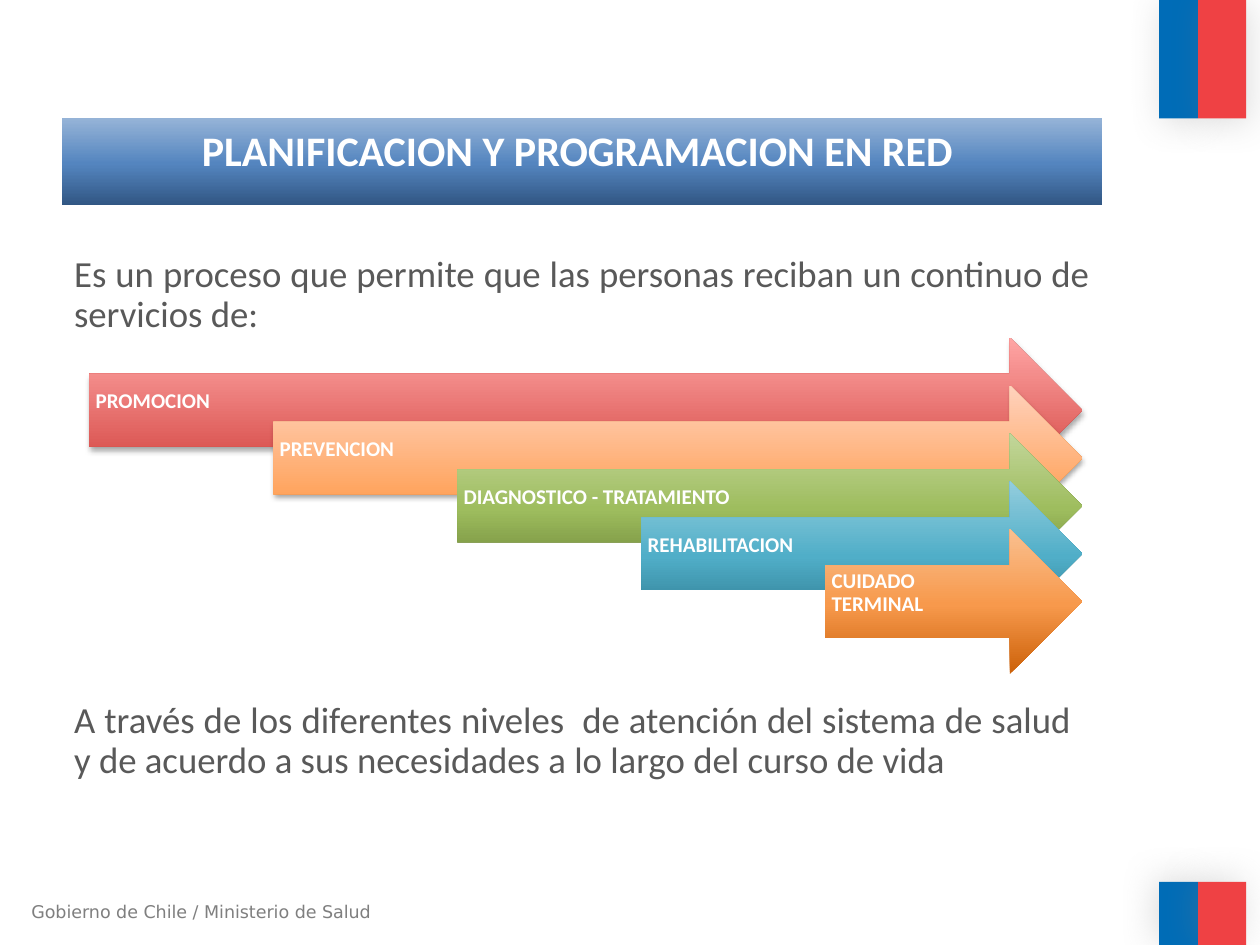
from lxml.etree import SubElement
from pptx import Presentation
from pptx.dml.color import RGBColor
from pptx.enum.shapes import MSO_SHAPE
from pptx.enum.text import MSO_ANCHOR, PP_ALIGN
from pptx.oxml.ns import qn
from pptx.util import Inches, Pt

TITLE = "PLANIFICACION Y PROGRAMACION EN RED "
TITLE_STOPS = [(0, "315683"), (48, "5485BF"), (100, "95B3D7")]
BODY = [
    ("Es un proceso que permite que las personas reciban un continuo de servicios de:", 1.98, 8.26),
    ("A través de los diferentes niveles  de atención del sistema de salud "
     "y de acuerdo a sus necesidades a lo largo del curso de vida", 5.52, 8.11),
]
FOOTER = "Gobierno de Chile / Ministerio de Salud"
SERVICES = [
    ("PROMOCION", [(0, "D1403C"), (100, "FFA6A5")], True),
    ("PREVENCION", [(0, "FF953E"), (100, "FFD2BD")], True),
    ("DIAGNOSTICO - TRATAMIENTO", [(0, "6A8336"), (48, "9EBD5E"), (100, "C3D69B")], False),
    ("REHABILITACION", [(0, "2C778B"), (48, "50AEC8"), (100, "93CDDD")], False),
    ("CUIDADO TERMINAL", [(0, "CC6109"), (48, "F7994C"), (100, "FAC090")], False),
]
STRIPES = [("006CB7", 9.2, 0.31), ("EF4144", 9.51, 0.38)]
BANDS = [(0, 0.94, 45), (7, 0.5, 215)]

MARGIN = 0.49
ARROW_LEFT, ARROW_TOP, ARROW_RIGHT, ARROW_HEIGHT = 0.71, 2.68, 8.59, 1.15
STEP_RIGHT, STEP_DOWN = 1.46, 0.38


def color(value):
    """Turn a hex string into a colour."""
    return RGBColor.from_string(value)


def fill_gradient(shape, stops):
    """Fill a shape with a gradient that runs from bottom to top."""
    shape.fill.gradient()
    shape.fill.gradient_angle = 90
    stop_list = shape.fill._fill._gradFill.find(qn("a:gsLst"))
    for old in list(stop_list):
        stop_list.remove(old)
    for position, value in stops:
        stop = SubElement(stop_list, qn("a:gs"), pos=str(position * 1000))
        SubElement(stop, qn("a:srgbClr"), val=value)


def add_shadow(shape, value, opacity, blur, distance, angle):
    """Give a shape an outer shadow."""
    effects = shape._element.spPr.find(qn("a:effectLst"))
    shadow = SubElement(effects, qn("a:outerShdw"), blurRad=str(Pt(blur)), dist=str(Pt(distance)),
                        dir=str(angle * 60000), algn="ctr", rotWithShape="0")
    tint = SubElement(shadow, qn("a:srgbClr"), val=value)
    SubElement(tint, qn("a:alpha"), val=str(opacity * 1000))


def write(shape, text, size, value, font="Calibri", bold=False, align=PP_ALIGN.LEFT, spacing=None):
    """Set and format the single paragraph of a shape."""
    frame = shape.text_frame
    frame.word_wrap = True
    frame.text = text
    para = frame.paragraphs[0]
    para.alignment = align
    para.line_spacing = spacing
    span = para.runs[0]
    span.font.size, span.font.name, span.font.bold = Pt(size), font, bold
    span.font.color.rgb = color(value)


def add_plain(page, preset, left, top, width, height):
    """Add a preset shape without line or shadow."""
    shape = page.shapes.add_shape(preset, *map(Inches, (left, top, width, height)))
    shape.line.fill.background()
    shape.shadow.inherit = False
    return shape


def add_text(page, left, top, width, height, text, **style):
    """Add a text box with one paragraph."""
    box = page.shapes.add_textbox(*map(Inches, (left, top, width, height)))
    write(box, text, **style)


def add_service(page, index, text, stops, shaded):
    """Add one arrow of the staircase."""
    left = ARROW_LEFT + index * STEP_RIGHT
    arrow = add_plain(page, MSO_SHAPE.RIGHT_ARROW, left, ARROW_TOP + index * STEP_DOWN,
                      ARROW_RIGHT - left, ARROW_HEIGHT)
    fill_gradient(arrow, stops)
    if shaded:
        add_shadow(arrow, "000000", 35, 3.1, 1.8, 90)
    frame = arrow.text_frame
    frame.vertical_anchor = MSO_ANCHOR.MIDDLE
    frame.margin_left = frame.margin_top = Inches(0.05)
    frame.margin_right, frame.margin_bottom = Inches(0.28), Inches(0.18)
    write(arrow, text, 12, "FFFFFF", bold=True, spacing=0.9)


def main():
    """Build the slide and save it."""
    deck = Presentation()
    deck.slide_width, deck.slide_height = Inches(10), Inches(7.5)
    page = deck.slides.add_slide(deck.slide_layouts[5])

    title = page.shapes.title
    title.left, title.top, title.width, title.height = map(Inches, (MARGIN, 0.94, 8.26, 0.69))
    fill_gradient(title, TITLE_STOPS)
    title.text_frame.vertical_anchor = MSO_ANCHOR.TOP
    write(title, TITLE, 24, "FFFFFF", bold=True, align=PP_ALIGN.CENTER)

    for top, height, angle in BANDS:
        for value, left, width in STRIPES:
            stripe = add_plain(page, MSO_SHAPE.RECTANGLE, left, top, width, height)
            stripe.fill.solid()
            stripe.fill.fore_color.rgb = color(value)
            add_shadow(stripe, "808080", 25, 20, 3, angle)

    add_text(page, 0.15, 7.1, 3.02, 0.27, FOOTER, size=10, value="7F7F7F", font="DejaVu Sans")
    for index, service in enumerate(SERVICES):
        add_service(page, index, *service)
    for text, top, width in BODY:
        add_text(page, MARGIN, top, width, 0.74, text, size=21, value="595959",
                 align=PP_ALIGN.JUSTIFY, spacing=0.9)

    deck.save("out.pptx")


if __name__ == "__main__":
    main()
